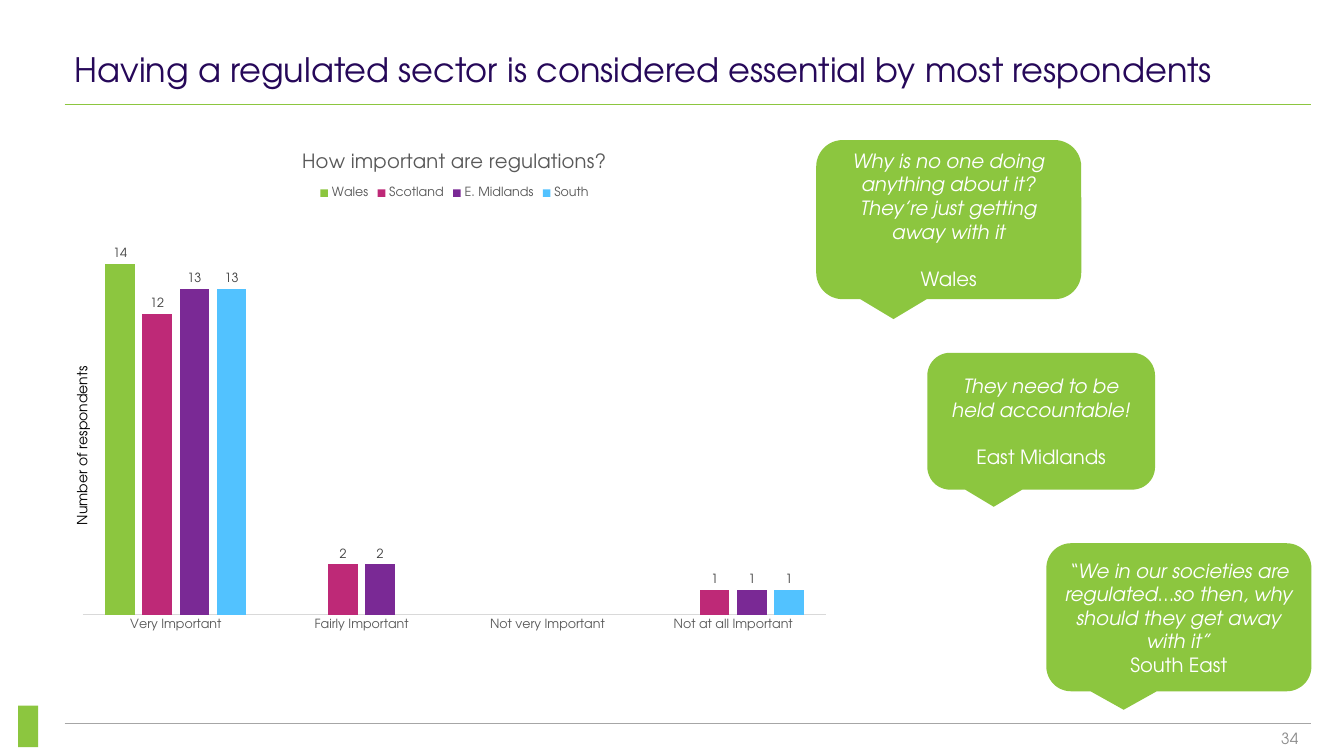
import pptx
import pptx.chart.data
import pptx.dml.color
import pptx.enum.chart
import pptx.enum.shapes
import pptx.enum.text
import pptx.oxml
import pptx.oxml.ns
import pptx.util
from lxml import etree
from pptx.util import Cm, Pt

TITLE = "Having a regulated sector is considered essential by most respondents"
PAGE_NUMBER = "34"
CHART_TITLE = "How important are regulations?"
AXIS_TITLE = "Number of respondents"
CATEGORIES = ["Very Important", "Fairly Important", "Not very Important", "Not at all Important"]
SERIES = [
    ("Wales", [14, None, None, None], "8CC63F"),
    ("Scotland", [12, 2, None, 1], "BE2977"),
    ("E. Midlands", [13, 2, None, 1], "7A2995"),
    ("South", [13, None, None, 1], "52C2FF"),
]
# quote, region, gap before the region in points, (left, top, width, height) in cm
CALLOUTS = [
    ("Why is no one doing anything about it? They’re just getting away with it",
     "Wales", 17, (20.57, 3.53, 6.68, 4.01)),
    ("They need to be held accountable!",
     "East Midlands", 17, (23.37, 8.89, 5.74, 3.45)),
    ("“We in our societies are regulated…so then, why should they get away with it”",
     "South East", 0, (26.37, 13.69, 6.68, 3.73)),
]
THEME = {
    "font": "TeX Gyre Adventor",
    "green": "8CC63F", "navy": "260859", "white": "FFFFFF", "black": "000000",
    "footer": "8C8C8C", "footer_rule": "A6A6A6", "axis": "D9D9D9",
    "chart_text": "595959", "label": "404040",
    "title_size": 24, "quote_size": 14, "page_size": 11, "axis_size": 10, "chart_size": 9,
}
RULE_LEFT, RULE_RIGHT = 1.63, 33.05
RULES = [(2.63, "green"), (18.24, "footer_rule")]
CHART_BOX = (1.7, 3.33, 19.51, 12.8)
PLOT_LAYOUT = (0.02, 0.16, 0.96, 0.79)
LEGEND_LAYOUT = (0.32, 0.1, 0.36, 0.04)


def color(name):
    return pptx.dml.color.RGBColor.from_string(THEME.get(name, name))


def set_font(font, size, shade):
    font.name = THEME["font"]
    font.size = Pt(THEME[size])
    font.color.rgb = color(shade)
    font.bold = False


def add_text(page, text, box, size, shade):
    shape = page.shapes.add_textbox(*map(Cm, box))
    shape.text_frame.word_wrap = True
    shape.text_frame.text = text
    para = shape.text_frame.paragraphs[0]
    set_font(para.runs[0].font, size, shade)
    return shape, para


def add_rule(page, y, shade):
    rule = page.shapes.add_connector(
        pptx.enum.shapes.MSO_CONNECTOR.STRAIGHT, Cm(RULE_LEFT), Cm(y), Cm(RULE_RIGHT), Cm(y))
    rule.line.color.rgb = color(shade)
    rule.line.width = Pt(0.5)
    etree.SubElement(rule.element.spPr, pptx.oxml.ns.qn("a:effectLst"))


def add_green_shape(page, kind, box):
    shape = page.shapes.add_shape(kind, *map(Cm, box))
    shape.shadow.inherit = False
    shape.fill.solid()
    shape.fill.fore_color.rgb = color("green")
    shape.line.fill.background()
    return shape


def add_callout(page, quote, region, gap, box):
    shape = add_green_shape(
        page, pptx.enum.shapes.MSO_SHAPE.ROUNDED_RECTANGULAR_CALLOUT, box)
    frame = shape.text_frame
    frame.word_wrap = True
    frame.vertical_anchor = pptx.enum.text.MSO_ANCHOR.MIDDLE
    frame.text = f"{quote}\n{region}"
    for para in frame.paragraphs:
        para.alignment = pptx.enum.text.PP_ALIGN.CENTER
        set_font(para.runs[0].font, "quote_size", "white")
    frame.paragraphs[0].runs[0].font.italic = True
    frame.paragraphs[1].space_before = Pt(gap)


def place(element, fractions, inner=False):
    """Give a plot area or legend a fixed place, as fractions of the chart."""
    qn = pptx.oxml.ns.qn
    for old in element.findall(qn("c:layout")):
        element.remove(old)
    layout = element.makeelement(qn("c:layout"))
    manual = etree.SubElement(layout, qn("c:manualLayout"))
    settings = [("layoutTarget", "inner")] if inner else []
    settings += [("xMode", "edge"), ("yMode", "edge")]
    settings += zip("xywh", fractions)
    for tag, value in settings:
        etree.SubElement(manual, qn(f"c:{tag}")).set("val", str(value))
    position = element.find(qn("c:legendPos"))
    if position is None:
        element.insert(0, layout)
    else:
        position.addnext(layout)


def add_importance_chart(page):
    data = pptx.chart.data.CategoryChartData()
    data.categories = CATEGORIES
    for name, values, _ in SERIES:
        data.add_series(name, values)
    enums = pptx.enum.chart
    chart = page.shapes.add_chart(
        enums.XL_CHART_TYPE.COLUMN_CLUSTERED, *map(Cm, CHART_BOX), data).chart
    set_font(chart.font, "axis_size", "black")

    chart.has_title = True
    chart.chart_title.text_frame.text = CHART_TITLE
    set_font(chart.chart_title.text_frame.paragraphs[0].runs[0].font, "quote_size", "chart_text")

    chart.has_legend = True
    chart.legend.position = enums.XL_LEGEND_POSITION.TOP
    chart.legend.include_in_layout = False
    set_font(chart.legend.font, "chart_size", "chart_text")

    axis = chart.category_axis
    axis.major_tick_mark = enums.XL_TICK_MARK.NONE
    axis.format.line.color.rgb = color("axis")
    axis.format.line.width = Pt(0.75)
    set_font(axis.tick_labels.font, "chart_size", "chart_text")
    chart.value_axis.visible = False
    chart.value_axis.has_major_gridlines = False
    chart.value_axis.minimum_scale = 0
    chart.value_axis.maximum_scale = 16

    plot = chart.plots[0]
    plot.vary_by_categories = False
    plot.gap_width = 150
    plot.overlap = -25
    for series, (_, _, shade) in zip(plot.series, SERIES):
        series.format.fill.solid()
        series.format.fill.fore_color.rgb = color(shade)
        labels = series.data_labels
        labels.show_value = True
        labels.position = enums.XL_LABEL_POSITION.OUTSIDE_END
        set_font(labels.font, "chart_size", "label")

    place(chart.element.chart.plotArea, PLOT_LAYOUT, inner=True)
    place(chart.legend.element if hasattr(chart.legend, "element")
          else chart.element.chart.find(pptx.oxml.ns.qn("c:legend")), LEGEND_LAYOUT)


def main():
    deck = pptx.Presentation()
    deck.slide_width, deck.slide_height = Cm(33.87), Cm(19.05)
    page = deck.slides.add_slide(deck.slide_layouts[6])

    for y, shade in RULES:
        add_rule(page, y, shade)
    add_green_shape(page, pptx.enum.shapes.MSO_SHAPE.RECTANGLE, (0.46, 17.78, 0.5, 1.05))

    _, para = add_text(page, PAGE_NUMBER, (30.25, 18.26, 2.72, 0.69), "page_size", "footer")
    para.alignment = pptx.enum.text.PP_ALIGN.RIGHT

    title, para = add_text(page, TITLE, (1.63, 0.28, 31.39, 2.08), "title_size", "navy")
    title.text_frame.vertical_anchor = pptx.enum.text.MSO_ANCHOR.BOTTOM
    para.line_spacing = 0.8

    add_importance_chart(page)
    for callout in CALLOUTS:
        add_callout(page, *callout)

    axis_title, _ = add_text(page, AXIS_TITLE, (-1.7, 9.37, 7.54, 0.69), "axis_size", "black")
    axis_title.rotation = 270
    deck.save("out.pptx")


if __name__ == "__main__":
    main()
